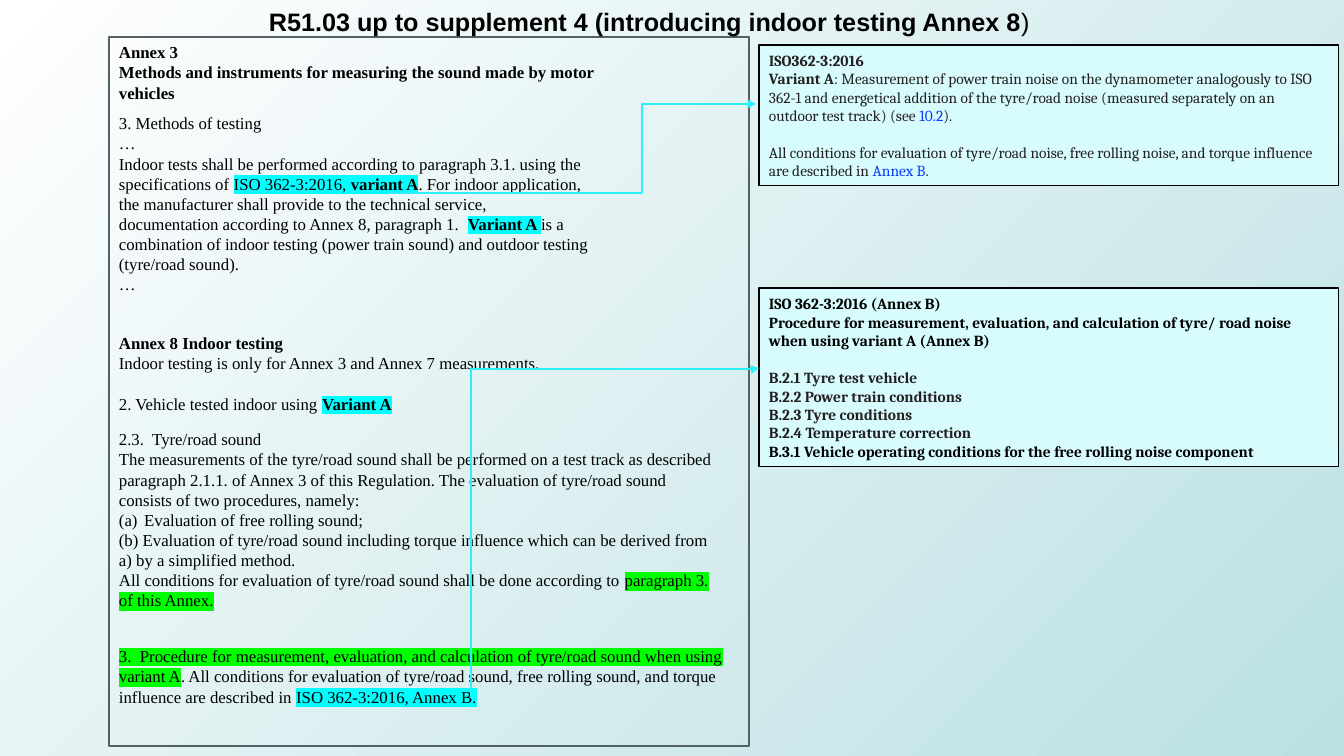
from lxml import etree
from pptx import Presentation
from pptx.dml.color import RGBColor
from pptx.enum.shapes import MSO_CONNECTOR as Link, MSO_SHAPE as Kind
from pptx.enum.text import MSO_ANCHOR as Anchor, MSO_AUTO_SIZE as Fit, PP_ALIGN as Align
from pptx.oxml.ns import qn
from pptx.util import Emu, Pt

COLORS = {
    "white": "FFFFFF", "mist": "BBE0E3", "black": "000000", "ink": "242021",
    "blue": "053CF5", "cyan": "00FFFF", "green": "00FF00", "frame": "526263",
    "pale": "D8FCFE", "arrow": "2BEFF9",
}
STYLES = {
    "plain": {}, "bold": {"bold": True},
    "cyan": {"mark": "cyan"}, "cyan bold": {"mark": "cyan", "bold": True},
    "green": {"mark": "green"}, "ink": {"color": "ink"},
    "ink bold": {"color": "ink", "bold": True}, "blue": {"color": "blue"},
}
LOOKS = {
    "title": {"name": "Arial", "size": 18},
    "rule": {"name": "Times New Roman", "size": 12},
    "note": {"name": "Cambria", "size": 11},
}
GAP, LIST = "gap", "list"

TEXTS = [
    ("title", (259, 1, 889, 40), [
        [("R51.03 up to supplement 4 (introducing indoor testing Annex 8", "bold"), (")", "plain")],
    ]),
    ("rule", (109, 37, 500, 72), [
        [("Annex 3", "bold")],
        [("Methods and instruments for measuring the sound made by motor vehicles", "bold")],
    ]),
    ("rule", (109, 108, 490, 194), [
        [("3. Methods of testing", "plain")],
        [("…", "plain")],
        [("Indoor tests shall be performed according to paragraph 3.1. using the specifications of ", "plain"),
         ("ISO 362-3:2016, ", "cyan"), ("variant A", "cyan bold"),
         (". For indoor application, the manufacturer shall provide to the technical service, "
          "documentation according to Annex 8, paragraph 1.  ", "plain"),
         ("Variant A ", "cyan bold"),
         ("is a combination of indoor testing (power train sound) and outdoor testing "
          "(tyre/road sound).", "plain")],
        [("…", "plain")],
    ]),
    ("rule", (109, 328, 558, 50), [
        [("Annex 8 Indoor testing", "bold")],
        [("Indoor testing is only for Annex 3 and Annex 7 measurements.", "plain")],
    ]),
    ("rule", (109, 389, 537, 30), [
        [("2. Vehicle tested indoor using ", "plain"), ("Variant A", "cyan bold")],
    ]),
    ("rule", (109, 424, 615, 194), [
        [("2.3.  Tyre/road sound", "plain")],
        [("The measurements of the tyre/road sound shall be performed on a test track as described "
          "paragraph 2.1.1. of Annex 3 of this Regulation. The evaluation of tyre/road sound "
          "consists of two procedures, namely:", "plain")],
        [LIST, ("Evaluation of free rolling sound;", "plain")],
        [("(b) Evaluation of tyre/road sound including torque influence which can be derived from "
          "a) by a simplified method.", "plain")],
        [("All conditions for evaluation of tyre/road sound shall be done according to ", "plain"),
         ("paragraph 3. of this Annex.", "green")],
    ]),
    ("rule", (109, 641, 640, 71), [
        [("3.  Procedure for measurement, evaluation, and calculation of tyre/road sound "
          "when using variant A", "green"),
         (". All conditions for evaluation of tyre/road sound, free rolling sound, and torque "
          "influence are described in ", "plain"),
         ("ISO 362-3:2016, Annex B.", "cyan")],
    ]),
]
NOTES = [
    ("note", (759, 288, 580, 179), [
        [("ISO 362-3:2016 (Annex B)", "bold")],
        [("Procedure for measurement, evaluation, and calculation of tyre/ road noise "
          "when using variant A (Annex B)", "bold")],
        [GAP, ("B.2.1 Tyre test vehicle", "ink bold")],
        [("B.2.2 Power train conditions", "ink bold")],
        [("B.2.3 Tyre conditions", "ink bold")],
        [("B.2.4 Temperature correction", "ink bold")],
        [("B.3.1 Vehicle operating conditions for the free rolling noise component", "bold")],
    ]),
    ("note", (759, 45, 580, 141), [
        [("ISO362-3:2016", "ink bold")],
        [("Variant A", "ink bold"),
         (": Measurement of power train noise on the dynamometer analogously to ISO 362-1 and "
          "energetical addition of the tyre/road noise (measured separately on an outdoor "
          "test track) (see ", "ink"),
         ("10.2", "blue"), (").", "ink")],
        [GAP, ("All conditions for evaluation of tyre/road noise, free rolling noise, and torque "
               "influence are described in ", "ink"),
         ("Annex B", "blue"), (".", "ink")],
    ]),
]
FRAME = (109, 37, 640, 709)
ARROWS = [
    {"ends": (780, 677, 450, 389), "turn": 90, "bend": 0.996},
    {"ends": (388, 193, 756, 104), "turn": 0, "bend": 0.691},
]


def px(*nums):
    return [Emu(round(n * 914400 / 100.8)) for n in nums]


def rgb(key):
    return RGBColor.from_string(COLORS[key])


def add_run(para, text, style, look):
    run = para.add_run()
    run.text = text
    form = {"color": "black", "bold": False, **STYLES[style]}
    run.font.color.rgb = rgb(form["color"])
    if "mark" in form:
        mark = etree.SubElement(run._r.get_or_add_rPr(), qn("a:highlight"))
        etree.SubElement(mark, qn("a:srgbClr"), val=COLORS[form["mark"]])
    for key, val in {"name": look["name"], "size": Pt(look["size"]), "bold": form["bold"]}.items():
        setattr(run.font, key, val)


def fill_text(shape, look, paras, anchor):
    frame = shape.text_frame
    for key, val in {"word_wrap": True, "auto_size": Fit.SHAPE_TO_FIT_TEXT,
                     "vertical_anchor": anchor}.items():
        setattr(frame, key, val)
    for i, parts in enumerate(paras):
        para = frame.paragraphs[0] if i == 0 else frame.add_paragraph()
        para.alignment = Align.LEFT
        for part in parts:
            if part == GAP:
                para.space_before = Pt(13)
            elif part == LIST:
                props = para._p.get_or_add_pPr()
                props.set("marL", "228600")
                props.set("indent", "-228600")
                etree.SubElement(props, qn("a:buAutoNum"), type="alphaLcParenBoth")
            else:
                add_run(para, *part, look)


def add_box(slide, area, line, width, fill=None):
    box = slide.shapes.add_shape(Kind.RECTANGLE, *px(*area))
    box.shadow.inherit = False
    box.line.color.rgb = rgb(line)
    box.line.width = Pt(width)
    if fill:
        box.fill.solid()
        box.fill.fore_color.rgb = rgb(fill)
    else:
        box.fill.background()
    return box


def add_arrow(slide, ends, turn, bend):
    link = slide.shapes.add_connector(Link.ELBOW, *px(*ends))
    link.line.color.rgb = rgb("arrow")
    link.line.width = Pt(1.5)
    props = link._element.spPr
    props.find(qn("a:xfrm")).set("rot", str(turn * 60000))
    guides = props.find(qn("a:prstGeom")).get_or_add_avLst()
    etree.SubElement(guides, qn("a:gd"), name="adj1", fmla=f"val {round(bend * 100000)}")
    etree.SubElement(props.find(qn("a:ln")), qn("a:tailEnd"), type="triangle")
    etree.SubElement(props, qn("a:effectLst"))


def main():
    deck = Presentation()
    deck.slide_width, deck.slide_height = px(1344, 756)
    slide = deck.slides.add_slide(deck.slide_layouts[6])
    back = slide.background.fill
    back.gradient()
    back.gradient_angle = 315
    for stop, key in zip(back.gradient_stops, ("white", "mist")):
        stop.color.rgb = rgb(key)
    add_box(slide, FRAME, "frame", 2)
    for look, area, paras in TEXTS:
        fill_text(slide.shapes.add_textbox(*px(*area)), LOOKS[look], paras, Anchor.TOP)
    for (look, area, paras), arrow in zip(NOTES, ARROWS):
        box = add_box(slide, area, "black", 0.75, "pale")
        fill_text(box, LOOKS[look], paras, Anchor.MIDDLE)
        add_arrow(slide, **arrow)
    deck.save("out.pptx")


if __name__ == "__main__":
    main()
